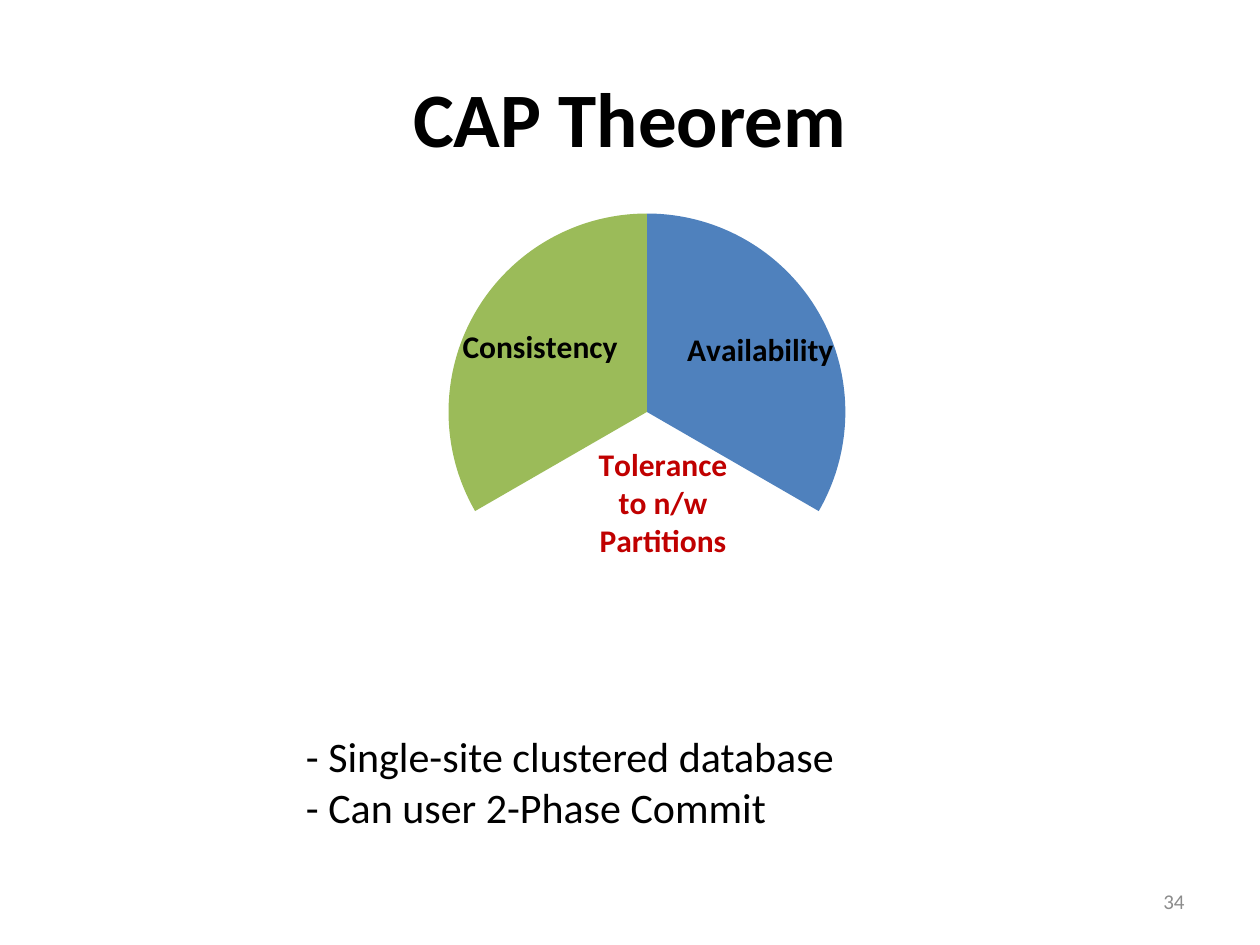
"""Build the CAP Theorem slide with its pie chart and notes on giving up partition tolerance."""
from lxml import etree
from pptx import Presentation
from pptx import util as u
from pptx.chart import data as chart_data
from pptx.dml import color
from pptx.enum import chart as ch, text
from pptx.oxml import ns

COLORS = {"text": "000000", "number": "8C8C8C", "blue": "4F81BD",
          "green": "9BBB59", "red": "C00000"}
FONT = "Calibri"


def write(frame, content, size, hue="text", bold=False, align=text.PP_ALIGN.LEFT,
          anchor=text.MSO_ANCHOR.TOP, wrap=True):
    frame.word_wrap = wrap
    frame.vertical_anchor = anchor
    frame.text = content
    for paragraph in frame.paragraphs:
        paragraph.alignment = align
        font = paragraph.font
        font.name, font.size, font.bold = FONT, u.Pt(size), bold
        font.color.rgb = color.RGBColor.from_string(COLORS[hue])


def manual_layout(**settings):
    layout = etree.Element(ns.qn("c:layout"))
    manual = etree.SubElement(layout, ns.qn("c:manualLayout"))
    for tag, value in settings.items():
        etree.SubElement(manual, ns.qn(f"c:{tag}")).set("val", str(value))
    return layout


prs = Presentation()
prs.slide_width, prs.slide_height = u.Inches(10), u.Inches(7.5)
slide = prs.slides.add_slide(prs.slide_layouts[5])

title = slide.shapes.title
title.left, title.top = u.Inches(0.5), u.Inches(0.3)
title.width, title.height = u.Inches(9), u.Inches(1.25)
write(title.text_frame, "CAP Theorem", 44, bold=True,
      align=text.PP_ALIGN.CENTER, anchor=text.MSO_ANCHOR.MIDDLE)

properties = [
    ("Consistency", "blue", "text", -0.17, -0.03),
    ("Availability", None, "text", 0.1, -0.32),
    ("Tolerance to n/w Partitions", "green", "red", 0.09, 0.28),
]
shares = chart_data.CategoryChartData()
shares.categories = [name for name, *_ in properties]
shares.add_series("Series 1", [33] * len(properties))
pie = slide.shapes.add_chart(ch.XL_CHART_TYPE.PIE, u.Inches(0.5), u.Inches(1.33),
                             u.Inches(9), u.Inches(4), shares).chart
pie.has_title = pie.has_legend = False
pie.font.name, pie.font.size = FONT, u.Pt(18)

plot_area = pie.plots[0]._element.getparent()
for automatic in plot_area.findall(ns.qn("c:layout")):
    plot_area.remove(automatic)
plot_area.insert(0, manual_layout(layoutTarget="inner", xMode="edge", yMode="edge",
                                  x=0.34, y=0.09, w=0.35, h=0.79))

series = pie.plots[0].series[0]
for index, (name, slice_hue, label_hue, dx, dy) in enumerate(properties):
    point = series.points[index]
    point.format.line.fill.background()
    if slice_hue:
        point.format.fill.solid()
        point.format.fill.fore_color.rgb = color.RGBColor.from_string(COLORS[slice_hue])
    else:
        point.format.fill.background()
    label = point.data_label
    label.font.name, label.font.size, label.font.bold = FONT, u.Pt(18), True
    label.font.color.rgb = color.RGBColor.from_string(COLORS[label_hue])
    label.position = ch.XL_LABEL_POSITION.CENTER

labels = series._element.find(ns.qn("c:dLbls"))
for label, (*_, dx, dy) in zip(labels.findall(ns.qn("c:dLbl")), properties):
    label.find(ns.qn("c:idx")).addnext(manual_layout(x=dx, y=dy))
for tag, shown in (("showVal", "0"), ("showCatName", "1"), ("showPercent", "0"),
                   ("showLeaderLines", "0")):
    for flag in labels.iter(ns.qn(f"c:{tag}")):
        flag.set("val", shown)

remarks = slide.shapes.add_textbox(u.Inches(2.33), u.Inches(5.75),
                                   u.Inches(4.43), u.Inches(0.91))
write(remarks.text_frame, "- Single-site clustered database\n- Can user 2-Phase Commit",
      24, wrap=False)
remarks.text_frame.auto_size = text.MSO_AUTO_SIZE.SHAPE_TO_FIT_TEXT

page_number = slide.shapes.add_textbox(u.Inches(7.17), u.Inches(6.95),
                                       u.Inches(2.33), u.Inches(0.4))
write(page_number.text_frame, "34", 12, hue="number", align=text.PP_ALIGN.RIGHT,
      anchor=text.MSO_ANCHOR.MIDDLE)

prs.save("out.pptx")
